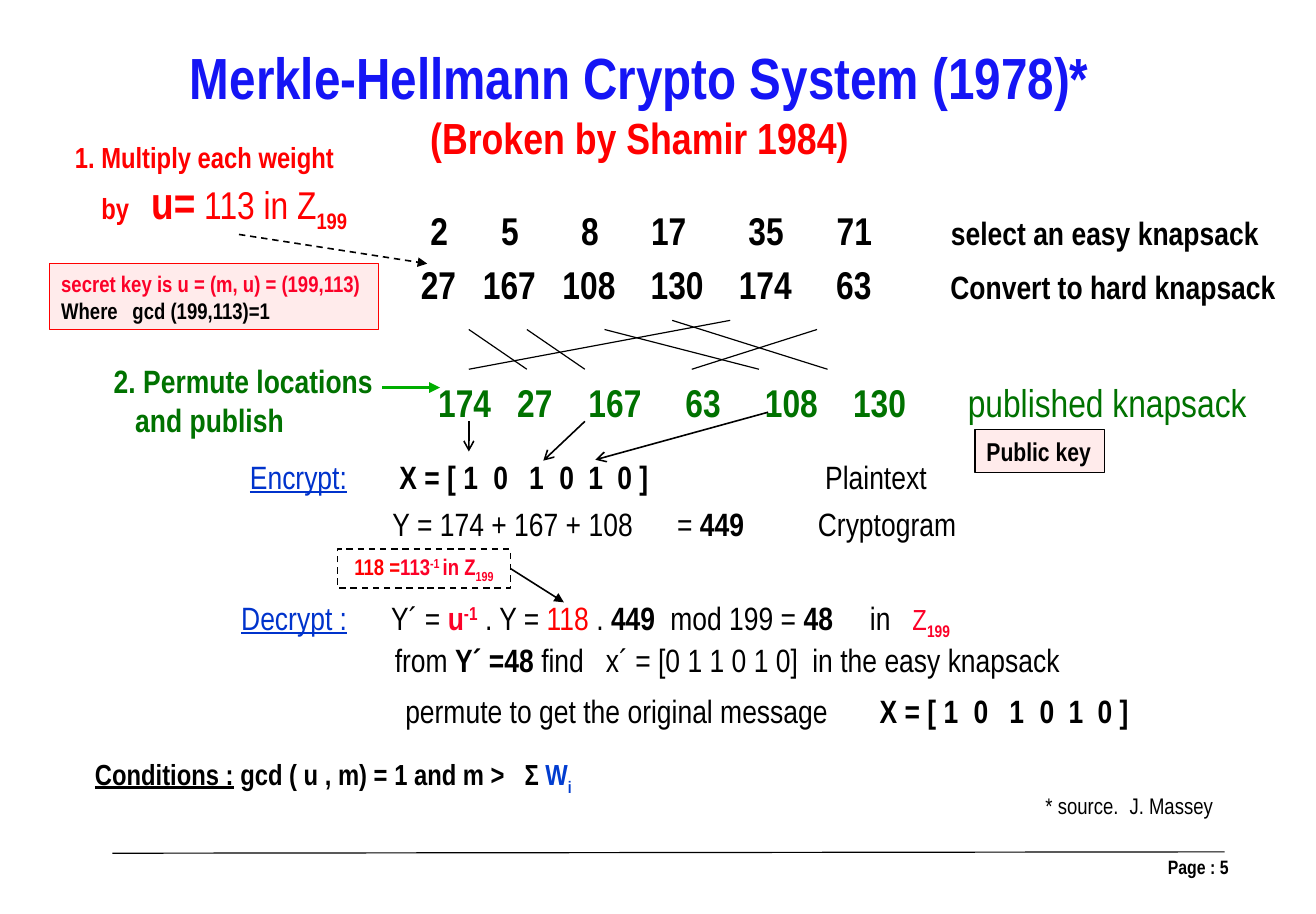
from dataclasses import asdict, dataclass
from typing import Optional

from lxml.etree import SubElement
from pptx import Presentation
from pptx.dml.color import RGBColor
from pptx.enum.dml import MSO_LINE
from pptx.enum.shapes import MSO_CONNECTOR, MSO_SHAPE
from pptx.enum.text import MSO_ANCHOR, MSO_AUTO_SIZE, PP_ALIGN
from pptx.oxml.ns import qn
from pptx.util import Cm, Pt

COLORS = {
    "black": "000000", "title": "1515F5", "red": "FF0000", "secret": "FC0128",
    "link": "0033CC", "weight": "023DD0", "green": "007200", "arrow": "00AE00",
    "pink": "FFEBEB",
}
FONT = "Arial Narrow"
INSET_X, INSET_Y = 0.25, 0.13
BIT_OFFSETS = (2.06, 2.84, 3.5, 4.14, 4.77)
MESSAGE = "X = [ 1\t0\t1\t0\t1\t0 ]"


@dataclass
class Span:
    text: str
    size: float = 20
    color: str = "black"
    bold: bool = False
    underline: bool = False
    baseline: int = 0


@dataclass
class Block:
    left: float
    top: float
    width: float
    height: float
    lines: list[list[Span]]
    stops: tuple[float, ...] = ()
    align: PP_ALIGN = PP_ALIGN.LEFT
    fill: Optional[str] = None
    outline: Optional[str] = None
    outline_width: float = 0.75
    dashed: bool = False


@dataclass
class Stroke:
    start: tuple[float, float]
    end: tuple[float, float]
    width: float = 0.75
    color: str = "black"
    head: Optional[str] = None
    dashed: bool = False
    origin: Optional[Block] = None


def rgb(name: str) -> RGBColor:
    return RGBColor.from_string(COLORS[name])


def add_text(paragraph, text: str, *, size: float, color: str, bold: bool,
             underline: bool, baseline: int) -> None:
    run = paragraph.add_run()
    run.text = text
    font = run.font
    font.name, font.size, font.bold, font.underline = FONT, Pt(size), bold, underline
    font.color.rgb = rgb(color)
    if baseline:
        run._r.get_or_add_rPr().set("baseline", str(baseline * 1000))


def fill_frame(shape, block: Block) -> None:
    frame = shape.text_frame
    frame.auto_size = MSO_AUTO_SIZE.NONE
    frame.word_wrap = True
    frame.vertical_anchor = MSO_ANCHOR.MIDDLE
    frame.margin_left = frame.margin_right = Cm(INSET_X)
    frame.margin_top = frame.margin_bottom = Cm(INSET_Y)
    for number, spans in enumerate(block.lines):
        paragraph = frame.add_paragraph() if number else frame.paragraphs[0]
        paragraph.alignment = block.align
        if block.stops:
            tabs = SubElement(paragraph._p.get_or_add_pPr(), qn("a:tabLst"))
            for stop in block.stops:
                position = Cm(stop - block.left - INSET_X)
                SubElement(tabs, qn("a:tab"), pos=str(int(position)), algn="l")
        for span in spans:
            add_text(paragraph, **asdict(span))


def draw_block(slide, block: Block):
    place = [Cm(v) for v in (block.left, block.top, block.width, block.height)]
    if block.outline:
        shape = slide.shapes.add_shape(MSO_SHAPE.RECTANGLE, *place)
        shape.shadow.inherit = False
        shape.line.color.rgb = rgb(block.outline)
        shape.line.width = Pt(block.outline_width)
        if block.dashed:
            shape.line.dash_style = MSO_LINE.DASH
        if block.fill:
            shape.fill.solid()
            shape.fill.fore_color.rgb = rgb(block.fill)
        else:
            shape.fill.background()
    else:
        shape = slide.shapes.add_textbox(*place)
    fill_frame(shape, block)
    return shape


def draw_stroke(slide, stroke: Stroke):
    ends = [Cm(v) for v in (*stroke.start, *stroke.end)]
    connector = slide.shapes.add_connector(MSO_CONNECTOR.STRAIGHT, *ends)
    connector.line.color.rgb = rgb(stroke.color)
    connector.line.width = Pt(stroke.width)
    if stroke.dashed:
        connector.line.dash_style = MSO_LINE.DASH
    if stroke.head:
        SubElement(connector.line._get_or_add_ln(), qn("a:tailEnd"), type=stroke.head)
    SubElement(connector._element.spPr, qn("a:effectLst"))
    return connector


def knapsack(left: float, top: float, weights: str, label: Span,
             stops: tuple[float, ...], color: str = "black") -> Block:
    numbers = Span("\t".join(weights.split()) + "\t", 24, color, True)
    return Block(left, top, 28.7 - left, 1.3, [[numbers, label]], stops)


def message_stops(start: float) -> tuple[float, ...]:
    return (start, *(round(start + offset, 2) for offset in BIT_OFFSETS))


TITLE = Block(3.81, 0.77, 20.37, 2.95, [
    [Span("Merkle-Hellmann Crypto System (1978)*", 36, "title", True)],
    [Span("(Broken by Shamir 1984)", 27, "red", True)]], align=PP_ALIGN.CENTER)

INVERSE = Block(7.39, 12.01, 3.78, 0.86, [[
    Span("118 =", 14, "red", True), Span("113", 14, "secret", True),
    Span("-1 ", 14, "secret", True, baseline=30), Span("in Z", 14, "secret", True),
    Span("199", 14, "secret", True, baseline=-25)]],
    align=PP_ALIGN.CENTER, outline="black", outline_width=1, dashed=True)

BLOCKS = [
    Block(20.68, 18.57, 6.46, 0.8, [[Span("Page : 5", 12, bold=True)]], align=PP_ALIGN.RIGHT),
    knapsack(9.17, 4.39, "2 5 8 17 35 71", Span("select an easy knapsack", bold=True),
             (10.97, 12.72, 14.25, 16.38, 18.31, 20.81)),
    knapsack(8.96, 5.56, "27 167 108 130 174 63", Span("Convert to hard knapsack", bold=True),
             (10.57, 12.31, 14.24, 16.17, 18.3, 20.8)),
    knapsack(9.34, 8.15, "174 27 167 63 108 130", Span("published knapsack", 24, "green"),
             (11.32, 12.88, 15, 16.74, 18.67, 21.18), "green"),
    Block(5.22, 9.88, 15.7, 1.12, [[
        Span("Encrypt:", color="link", underline=True),
        Span("\t" + MESSAGE, bold=True), Span("\tPlaintext")]], (*message_stops(8.74), 18.06)),
    Block(8.34, 10.9, 13.1, 1.12, [[
        Span("Y = 174 + 167 + 108\t= "), Span("449", bold=True), Span("\tCryptogram")]],
        (14.82, 17.9)),
    Block(1.39, 2.97, 7.09, 2.24, [
        [Span("1. Multiply each weight", 18, "red", True)],
        [Span("\tby\t", 18, "red", True), Span("u=", 28, "red", True),
         Span(" 113 in Z", 24, "red"), Span("199", 24, "red", True, baseline=-25)]],
        (2.22, 3.31)),
    Block(1.83, 16.46, 16.08, 1.07, [[
        Span("Conditions :", 18, bold=True, underline=True),
        Span(" gcd ( u , m) = 1 and m >\tΣ ", 18, bold=True),
        Span("W", 18, "weight", True), Span("i", 18, "weight", True, baseline=-25)]], (11.48,)),
    Block(1.09, 5.77, 7.19, 1.45, [
        [Span("secret key is u = (m, u) = (199,113)", 14, "secret", True)],
        [Span("Where\tgcd (199,113)=1", 14, bold=True)]], (2.9,), fill="pink", outline="red"),
    Block(22.63, 17.2, 4.8, 0.86, [[Span("* source.\tJ. Massey", 14)]], (24.72,)),
    Block(5.03, 13, 16.36, 1.12, [[
        Span("Decrypt :", color="link", underline=True), Span("\tY´ = "),
        Span("u", color="secret", bold=True),
        Span("-1", color="secret", bold=True, baseline=30), Span(" . Y = "),
        Span("118 ", color="red"), Span(". "), Span("449", bold=True),
        Span("\tmod 199 = "), Span("48", bold=True), Span("\tin\t"),
        Span("Z", 18, "secret"), Span("199", 18, "secret", True, baseline=-25)]],
        (8.56, 14.67, 19.04, 19.97)),
    Block(8.39, 13.87, 15.32, 1.12, [[
        Span("from "), Span("Y´ =48 ", bold=True),
        Span("find\tx´ = [0 1 1 0 1 0]\tin the easy knapsack")]], (13.26, 17.78)),
    Block(8.62, 14.99, 16.8, 1.12, [[
        Span("permute to get the original message\t"), Span(MESSAGE, bold=True)]],
        message_stops(19.25)),
    Block(2.24, 7.77, 6.35, 1.98, [
        [Span("2. Permute locations", color="green", bold=True)],
        [Span("\tand publish", color="green", bold=True)]], (2.96,)),
    Block(21.34, 9.4, 2.84, 0.94, [[Span("Public key", 16, bold=True)]],
          fill="pink", outline="black"),
    INVERSE,
]

PERMUTATION = [(10.26, 7.21, 11.53), (11.53, 7.21, 12.8), (15.98, 7.01, 10.26),
               (14.71, 7.01, 18.11), (17.88, 7.21, 15.14), (13.23, 7.21, 16.61)]
SELECTION = [((10.26, 9.22), (10.26, 9.88)), ((12.8, 9.22), (11.89, 10.08)),
             ((16.81, 9.02), (13.03, 10.06))]
STROKES = [
    Stroke((2.46, 18.67), (26.8, 18.64)),
    Stroke((5.23, 5.13), (9.35, 5.77), 1, head="triangle", dashed=True),
    Stroke((11.17, 12.44), (12.34, 13.18), 1, head="triangle", origin=INVERSE),
    Stroke((8.36, 8.48), (9.63, 8.48), 2.25, "arrow", "triangle"),
    *(Stroke(start, end, 1, head="arrow") for start, end in SELECTION),
    *(Stroke((source, top), (target, 8.08)) for source, top, target in PERMUTATION),
]


def main() -> None:
    """Build the knapsack cryptosystem slide and save it."""
    deck = Presentation()
    deck.slide_width, deck.slide_height = Cm(28.8), Cm(20)
    slide = deck.slides.add_slide(deck.slide_layouts[5])
    title = slide.shapes.title
    title.left, title.top = Cm(TITLE.left), Cm(TITLE.top)
    title.width, title.height = Cm(TITLE.width), Cm(TITLE.height)
    fill_frame(title, TITLE)
    drawn = {id(block): draw_block(slide, block) for block in BLOCKS}
    for stroke in STROKES:
        connector = draw_stroke(slide, stroke)
        if stroke.origin:
            connector.begin_connect(drawn[id(stroke.origin)], 3)
    deck.save("out.pptx")


if __name__ == "__main__":
    main()
